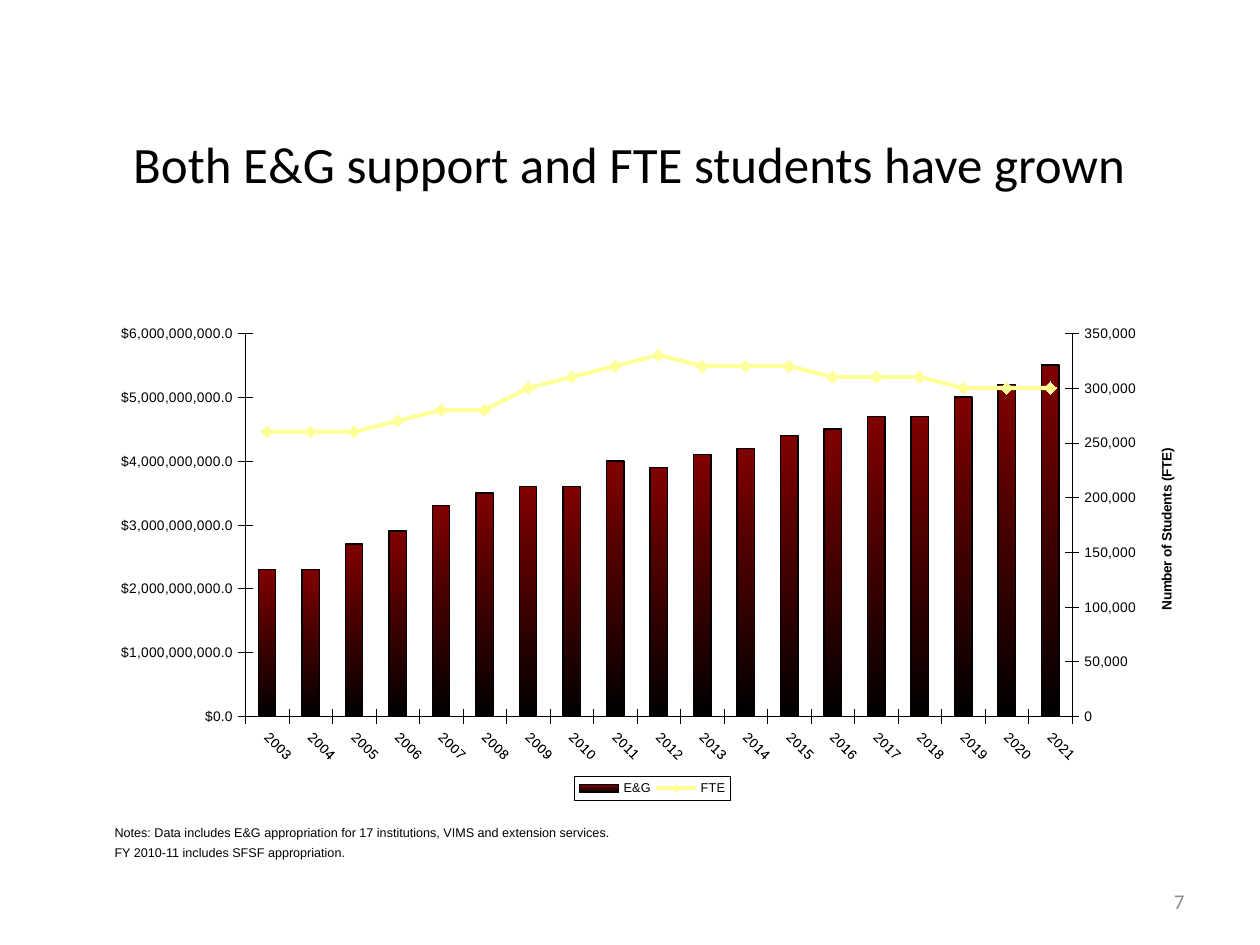
from pptx import Presentation
from pptx.chart.axis import ValueAxis
from pptx.chart.data import CategoryChartData
from pptx.dml.color import RGBColor
from pptx.enum.chart import (XL_CHART_TYPE, XL_LEGEND_POSITION, XL_MARKER_STYLE,
                             XL_TICK_MARK)
from pptx.enum.text import MSO_ANCHOR, PP_ALIGN
from pptx.oxml import parse_xml
from pptx.util import Cm, Pt

COLUMNS = XL_CHART_TYPE.COLUMN_CLUSTERED
BOTTOM = XL_LEGEND_POSITION.BOTTOM
DIAMOND = XL_MARKER_STYLE.DIAMOND
CROSS, NO_TICK = XL_TICK_MARK.CROSS, XL_TICK_MARK.NONE
TOP, MIDDLE = MSO_ANCHOR.TOP, MSO_ANCHOR.MIDDLE
LEFT, CENTER, RIGHT = PP_ALIGN.LEFT, PP_ALIGN.CENTER, PP_ALIGN.RIGHT
NAMESPACES = (
    'xmlns:c="http://schemas.openxmlformats.org/drawingml/2006/chart" '
    'xmlns:a="http://schemas.openxmlformats.org/drawingml/2006/main"'
)
BLACK, MAROON, YELLOW, GRAY = "000000", "800000", "FFFF99", "8C8C8C"

YEARS = [str(year) for year in range(2003, 2022)]
SUPPORT_BILLIONS = [2.3, 2.3, 2.7, 2.9, 3.3, 3.5, 3.6, 3.6, 4.0, 3.9,
                    4.1, 4.2, 4.4, 4.5, 4.7, 4.7, 5.0, 5.2, 5.5]
STUDENT_THOUSANDS = [260, 260, 260, 270, 280, 280, 300, 310, 320, 330,
                     320, 320, 320, 310, 310, 310, 300, 300, 300]


def color(value):
    return RGBColor.from_string(value)


def chart_xml(markup):
    """Parse chart markup whose root element lacks namespace declarations."""
    end_of_name = markup.index(">")
    return parse_xml(f"{markup[:end_of_name]} {NAMESPACES}{markup[end_of_name:]}")


def apply(target, values):
    for name, value in values.items():
        setattr(target, name, value)


def set_line(line, value, width):
    line.color.rgb = color(value)
    line.width = Pt(width)


def manual_layout(percents, inner=False):
    """Place a chart part by left, top and optional width, height in percent."""
    target = '<c:layoutTarget val="inner"/>' if inner else ""
    lengths = "".join(f'<c:{name} val="{percent / 100:.3f}"/>'
                      for name, percent in zip("xywh", percents))
    return chart_xml(
        f'<c:layout><c:manualLayout>{target}'
        '<c:xMode val="edge"/><c:yMode val="edge"/>'
        f'{lengths}</c:manualLayout></c:layout>')


def remove_all(parent, query):
    for element in parent.xpath(query):
        element.getparent().remove(element)


def move_to_second_axis(plot_area):
    """Turn the last column series into a line on a right-hand axis; return that axis."""
    series = plot_area.xpath("c:barChart/c:ser")[-1]
    remove_all(series, "c:invertIfNegative")
    line_plot = chart_xml(
        '<c:lineChart><c:grouping val="standard"/><c:varyColors val="0"/>'
        '<c:marker val="1"/><c:axId val="5001"/><c:axId val="5002"/></c:lineChart>')
    line_plot.insert(2, series)
    plot_area.xpath("c:barChart")[0].addnext(line_plot)
    hidden_categories = chart_xml(
        '<c:catAx><c:axId val="5001"/>'
        '<c:scaling><c:orientation val="minMax"/></c:scaling>'
        '<c:delete val="1"/><c:axPos val="b"/>'
        '<c:crossAx val="5002"/><c:crosses val="autoZero"/></c:catAx>')
    right_axis = chart_xml(
        '<c:valAx><c:axId val="5002"/>'
        '<c:scaling><c:orientation val="minMax"/></c:scaling>'
        '<c:delete val="0"/><c:axPos val="r"/>'
        '<c:tickLblPos val="nextTo"/><c:crossAx val="5001"/>'
        '<c:crosses val="max"/><c:crossBetween val="between"/></c:valAx>')
    plot_area.xpath("c:valAx")[-1].addnext(hidden_categories)
    hidden_categories.addnext(right_axis)
    return ValueAxis(right_axis)


class SlideBuilder:
    def __init__(self, slide, chart_font):
        self.slide = slide
        self.chart_font = chart_font

    def set_font(self, font, size, name=None, value=BLACK, bold=False):
        apply(font, {"name": name or self.chart_font, "size": Pt(size), "bold": bold})
        font.color.rgb = color(value)

    def text(self, box, lines, size, name, value=BLACK, align=LEFT,
             anchor=MIDDLE, space_before=0):
        frame = self.slide.shapes.add_textbox(*map(Cm, box)).text_frame
        apply(frame, {"word_wrap": True, "vertical_anchor": anchor,
                      "text": "\n".join(lines)})
        for paragraph in frame.paragraphs:
            apply(paragraph, {"alignment": align, "space_before": Pt(space_before)})
            self.set_font(paragraph.runs[0].font, size, name, value)

    def format_axis(self, axis, number_format=None, scale=None):
        apply(axis, {"has_major_gridlines": False, "major_tick_mark": CROSS,
                     "minor_tick_mark": NO_TICK})
        set_line(axis.format.line, BLACK, 0.2)
        self.set_font(axis.tick_labels.font, 7.9)
        if number_format:
            apply(axis.tick_labels, {"number_format": number_format,
                                     "number_format_is_linked": False})
            maximum, step = scale
            apply(axis, {"minimum_scale": 0, "maximum_scale": maximum,
                         "major_unit": step})

    def format_legend(self, chart):
        chart.has_legend = True
        apply(chart.legend, {"position": BOTTOM, "include_in_layout": False})
        self.set_font(chart.legend.font, 7.3)
        legend = chart.element.xpath("c:chart/c:legend")[0]
        remove_all(legend, "c:layout")
        legend.xpath("c:legendPos")[0].addnext(manual_layout((42.4, 94.6, 14.8, 5)))
        legend.xpath("c:overlay")[0].addnext(chart_xml(
            '<c:spPr><a:noFill/><a:ln w="2540"><a:solidFill>'
            f'<a:srgbClr val="{BLACK}"/></a:solidFill></a:ln></c:spPr>'))

    def combined_chart(self, box, categories, columns, line, right_title):
        data = CategoryChartData()
        data.categories = categories
        for name, values in (columns, line):
            data.add_series(name, values)
        chart = self.slide.shapes.add_chart(COLUMNS, *map(Cm, box), data).chart
        chart.has_title = False
        self.set_font(chart.font, 8)
        plot_area = chart.element.xpath("c:chart/c:plotArea")[0]
        left_axis = chart.value_axis
        right_axis = move_to_second_axis(plot_area)
        remove_all(plot_area, "c:layout")
        plot_area.insert(0, manual_layout((11.3, 5.2, 78.2, 77.4), inner=True))

        self.format_axis(chart.category_axis)
        plot_area.xpath("c:catAx/c:txPr/a:bodyPr")[0].set("rot", "2700000")
        self.format_axis(left_axis, r"\$#,##0.0", (6e9, 1e9))
        self.format_axis(right_axis, "#,##0", (350000, 50000))
        title = right_axis.axis_title.text_frame
        title.text = right_title
        self.set_font(title.paragraphs[0].runs[0].font, 7.8, bold=True)
        remove_all(plot_area, "c:valAx/c:title/c:layout")
        plot_area.xpath("c:valAx/c:title/c:tx")[0].addnext(manual_layout((97.4, 27.8)))

        column_plot, line_plot = chart.plots
        apply(column_plot, {"gap_width": 150, "vary_by_categories": False})
        bars, curve = column_plot.series[0], line_plot.series[0]
        bars.format.fill.gradient()
        bars.format.fill.gradient_angle = 270
        for stop, value in zip(bars.format.fill.gradient_stops, (MAROON, BLACK)):
            stop.color.rgb = color(value)
        set_line(bars.format.line, BLACK, 0.8)
        curve.smooth = False
        set_line(curve.format.line, YELLOW, 2.39)
        apply(curve.marker, {"style": DIAMOND, "size": 7})
        curve.marker.format.fill.solid()
        curve.marker.format.fill.fore_color.rgb = color(YELLOW)
        set_line(curve.marker.format.line, YELLOW, 0.75)
        self.format_legend(chart)


def main():
    presentation = Presentation()
    apply(presentation, {"slide_width": Cm(25.4), "slide_height": Cm(19.05)})
    slide = presentation.slides.add_slide(presentation.slide_layouts[6])
    builder = SlideBuilder(slide, chart_font="Arial")
    builder.text((18.21, 17.65, 5.92, 1.02), ["7"], 12, "Calibri", GRAY, RIGHT)
    builder.text((1.9, 1.7, 21.59, 3.18),
                 ["Both E&G support and FTE students have grown"],
                 29.1, "Calibri", align=CENTER)
    builder.combined_chart(
        (2.44, 6.2, 21.41, 9.98), YEARS,
        ("E&G", [round(value * 1e9) for value in SUPPORT_BILLIONS]),
        ("FTE", [value * 1000 for value in STUDENT_THOUSANDS]),
        "Number of Students (FTE)")
    builder.text((2.06, 16.51, 20.4, 0.99),
                 ["Notes: Data includes E&G appropriation for 17 institutions, "
                  "VIMS and extension services.",
                  "FY 2010-11 includes SFSF appropriation."],
                 7.2, "Arial", anchor=TOP, space_before=2.8)
    presentation.save("out.pptx")


if __name__ == "__main__":
    main()
